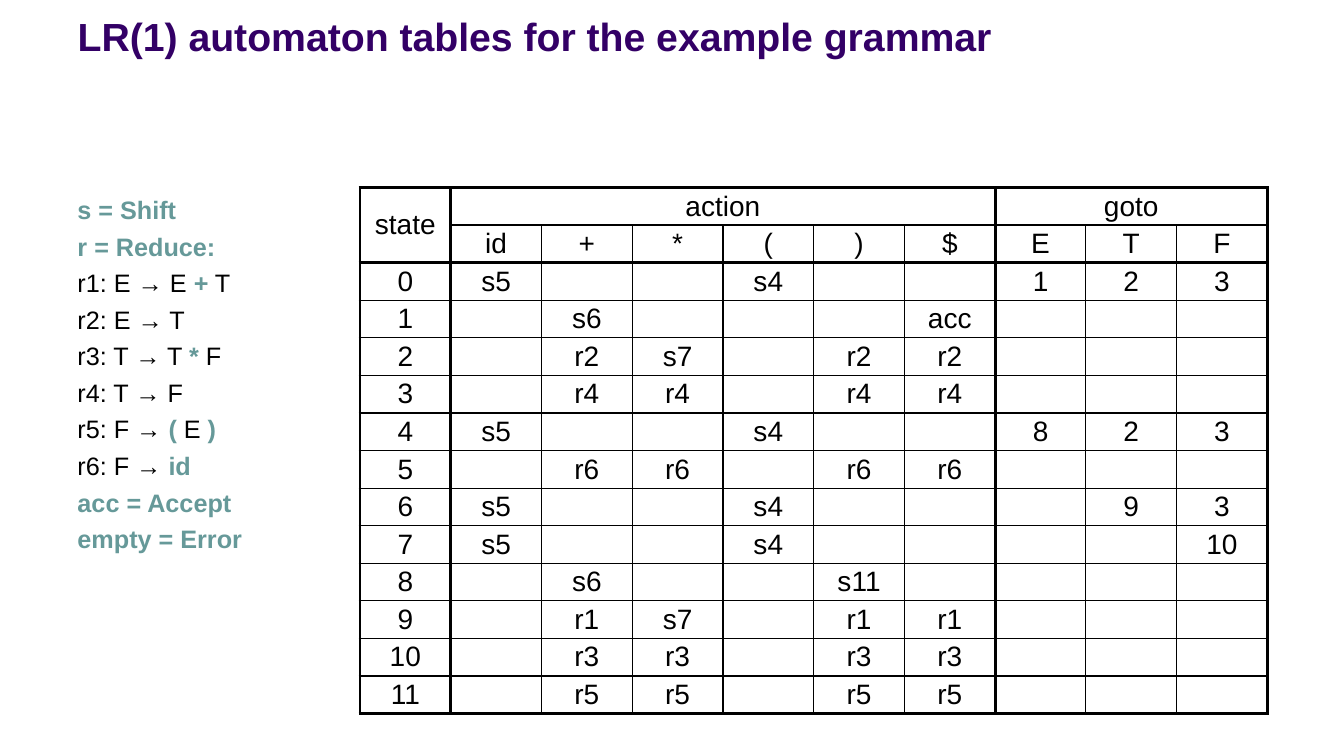
from lxml.etree import SubElement
from pptx import Presentation
from pptx.dml.color import RGBColor
from pptx.enum.text import MSO_ANCHOR, PP_ALIGN
from pptx.oxml.ns import qn
from pptx.util import Inches, Pt

COLORS = {"title": "330066", "accent": "669999", "ink": "000000"}
FONT = "Arial"

TITLE = "LR(1) automaton tables for the example grammar"
# Each legend line is a list of (text, is_accent) runs.
LEGEND = [
    [("s = Shift", True)],
    [("r = Reduce:", True)],
    [("r1: E → E ", False), ("+", True), (" T", False)],
    [("r2: E → T", False)],
    [("r3: T → T ", False), ("*", True), (" F", False)],
    [("r4: T → F", False)],
    [("r5: F → ", False), ("(", True), (" E ", False), (")", True)],
    [("r6: F → ", False), ("id", True)],
    [("acc = Accept", True)],
    [("empty = Error", True)],
]
SYMBOLS = ["id", "+", "*", "(", ")", "$", "E", "T", "F"]
STATES = [
    {"id": "s5", "(": "s4", "E": "1", "T": "2", "F": "3"},
    {"+": "s6", "$": "acc"},
    {"+": "r2", "*": "s7", ")": "r2", "$": "r2"},
    {"+": "r4", "*": "r4", ")": "r4", "$": "r4"},
    {"id": "s5", "(": "s4", "E": "8", "T": "2", "F": "3"},
    {"+": "r6", "*": "r6", ")": "r6", "$": "r6"},
    {"id": "s5", "(": "s4", "T": "9", "F": "3"},
    {"id": "s5", "(": "s4", "F": "10"},
    {"+": "s6", ")": "s11"},
    {"+": "r1", "*": "s7", ")": "r1", "$": "r1"},
    {"+": "r3", "*": "r3", ")": "r3", "$": "r3"},
    {"+": "r5", "*": "r5", ")": "r5", "$": "r5"},
]
HEADER = ["state", "action"] + [""] * 5 + ["goto", "", ""]
ROWS = [HEADER, [""] + SYMBOLS] + [
    [str(number)] + [moves.get(symbol, "") for symbol in SYMBOLS]
    for number, moves in enumerate(STATES)
]
# First and last cell of each merged heading, as (row, column).
MERGES = [((0, 0), (1, 0)), ((0, 1), (0, 6)), ((0, 7), (0, 9))]
HEAVY_COLUMN_EDGES = {0, 1, 7, 10}
HEAVY_ROW_EDGES = {0, 2, 14}
HEAVY, THIN = Pt(2.25), Pt(1)


def style_font(font, size, color, bold=False):
    font.name = FONT
    font.size = Pt(size)
    font.bold = bold
    font.color.rgb = RGBColor.from_string(COLORS[color])


def add_run(para, text, size, color, bold=False):
    span = para.add_run()
    span.text = text
    style_font(span.font, size, color, bold)


def place_title(page, left, top, width, height):
    title = page.shapes.title
    title.left, title.top = Inches(left), Inches(top)
    title.width, title.height = Inches(width), Inches(height)
    frame = title.text_frame
    frame.word_wrap = True
    frame.vertical_anchor = MSO_ANCHOR.BOTTOM
    para = frame.paragraphs[0]
    para.alignment = PP_ALIGN.LEFT
    add_run(para, TITLE, 28, "title", True)


def add_legend(page, left, top, width, height):
    box = page.shapes.add_textbox(Inches(left), Inches(top), Inches(width), Inches(height))
    frame = box.text_frame
    frame.word_wrap = True
    for index, line in enumerate(LEGEND):
        para = frame.add_paragraph() if index else frame.paragraphs[0]
        para.space_before = Pt(4.5)
        for text, is_accent in line:
            add_run(para, text, 18, "accent" if is_accent else "ink", is_accent)


def draw_borders(cell, row, column):
    """Rule the cell's edges; a cell covered by a merge gets only heavy ones."""
    right, bottom = column + 1, row + 1
    if cell.is_merge_origin:
        right, bottom = column + cell.span_width, row + cell.span_height
    edges = [
        ("a:lnL", column in HEAVY_COLUMN_EDGES),
        ("a:lnR", right in HEAVY_COLUMN_EDGES),
        ("a:lnT", row in HEAVY_ROW_EDGES),
        ("a:lnB", bottom in HEAVY_ROW_EDGES),
    ]
    properties = cell._tc.get_or_add_tcPr()
    for tag, is_heavy in edges:
        if cell.is_spanned and not is_heavy:
            continue
        line = SubElement(properties, qn(tag), w=str(HEAVY if is_heavy else THIN))
        fill = SubElement(line, qn("a:solidFill"))
        SubElement(fill, qn("a:srgbClr"), val=COLORS["ink"])


def fill_cell(cell, text):
    cell.margin_left = cell.margin_right = Inches(0.1)
    cell.margin_top = cell.margin_bottom = Inches(0.02)
    cell.vertical_anchor = MSO_ANCHOR.MIDDLE
    para = cell.text_frame.paragraphs[0]
    para.alignment = PP_ALIGN.CENTER
    if text:
        add_run(para, text, 20, "ink")
    else:
        style_font(para.font, 18, "ink")


def add_parse_table(page, left, top, width, height):
    row_count, column_count = len(ROWS), len(HEADER)
    table = page.shapes.add_table(
        row_count, column_count, Inches(left), Inches(top), Inches(width), Inches(height)
    ).table
    table.first_row = table.horz_banding = False
    for column in table.columns:
        column.width = Inches(width / column_count)
    for row in table.rows:
        row.height = Inches(height / row_count)
    for first, last in MERGES:
        table.cell(*first).merge(table.cell(*last))
    for row, texts in enumerate(ROWS):
        for column, text in enumerate(texts):
            cell = table.cell(row, column)
            fill_cell(cell, text)
            draw_borders(cell, row, column)
            cell.fill.background()


def main():
    deck = Presentation()
    deck.slide_width, deck.slide_height = Inches(13.33), Inches(7.5)
    page = deck.slides.add_slide(deck.slide_layouts[5])
    place_title(page, 0.67, 0.13, 12, 0.51)
    add_parse_table(page, 3.57, 1.86, 9, 5.22)
    add_legend(page, 0.67, 1.88, 2.61, 4.82)
    deck.save("out.pptx")


if __name__ == "__main__":
    main()
